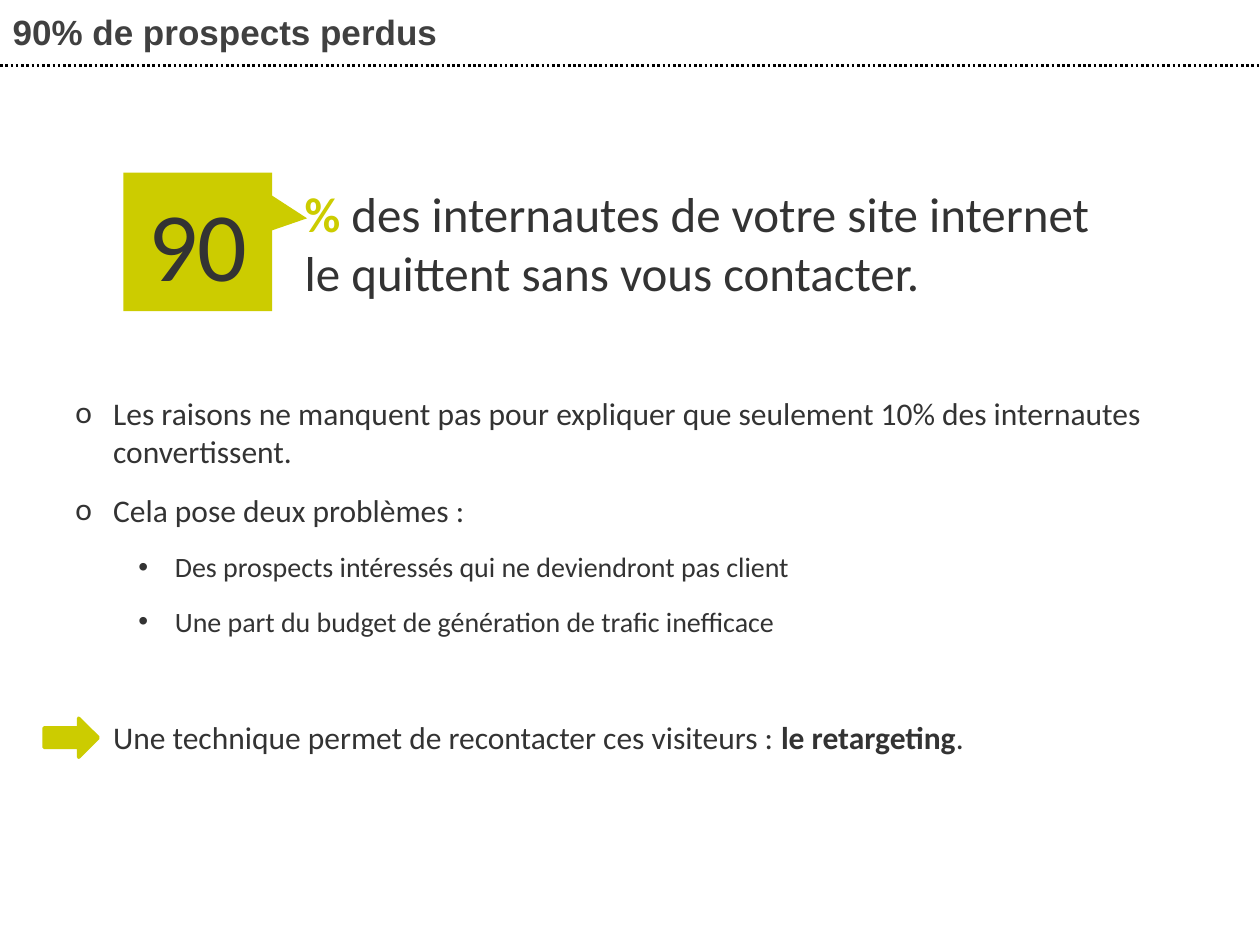
import pptx
import pptx.dml.color
import pptx.enum.dml
import pptx.enum.shapes
import pptx.enum.text
import pptx.oxml.ns
import pptx.util
import lxml.etree

Inches = pptx.util.Inches
Pt = pptx.util.Pt
RGBColor = pptx.dml.color.RGBColor
ANCHOR = pptx.enum.text.MSO_ANCHOR
ALIGN = pptx.enum.text.PP_ALIGN
SHAPE = pptx.enum.shapes.MSO_SHAPE
qn = pptx.oxml.ns.qn

LIME = RGBColor(0xCC, 0xCC, 0x00)
DARK = RGBColor(0x33, 0x33, 0x33)
TITLE_GREY = RGBColor(0x40, 0x40, 0x40)
BLACK = RGBColor(0, 0, 0)


def add_span(para, text, size, color=DARK, bold=False, font="Calibri"):
    span = para.add_run()
    span.text = text
    span.font.name = font
    span.font.size = Pt(size)
    span.font.bold = bold
    span.font.color.rgb = color


def set_margins(frame, left, top, right, bottom):
    frame.margin_left, frame.margin_top = Inches(left), Inches(top)
    frame.margin_right, frame.margin_bottom = Inches(right), Inches(bottom)


def set_indent(para, left, hanging, bullet=None, font="Calibri"):
    properties = para._p.get_or_add_pPr()
    properties.set("marL", str(Inches(left)))
    properties.set("indent", str(-Inches(hanging)))
    if bullet:
        lxml.etree.SubElement(properties, qn("a:buFont")).set("typeface", font)
        lxml.etree.SubElement(properties, qn("a:buChar")).set("char", bullet)


def add_text_box(page, left, top, width, height):
    box = page.shapes.add_textbox(Inches(left), Inches(top), Inches(width), Inches(height))
    box.text_frame.word_wrap = True
    return box.text_frame


def add_lime_shape(page, kind, left, top, width, height):
    shape = page.shapes.add_shape(kind, Inches(left), Inches(top), Inches(width), Inches(height))
    shape.shadow.inherit = False
    shape.fill.solid()
    shape.fill.fore_color.rgb = LIME
    return shape


def add_header(page, left, top, width, height):
    title = page.shapes.title
    title.left, title.top = Inches(left), Inches(top)
    title.width, title.height = Inches(width), Inches(height)
    frame = title.text_frame
    frame.auto_size = pptx.enum.text.MSO_AUTO_SIZE.NONE
    frame.vertical_anchor = ANCHOR.MIDDLE
    set_margins(frame, 0.1, 0.05, 0.2, 0.05)
    para = frame.paragraphs[0]
    para.alignment = ALIGN.LEFT
    add_span(para, "90% de prospects perdus", 20, TITLE_GREY, True, "Arial")

    rule_y = Inches(top + height + 0.02)
    rule = page.shapes.add_connector(
        pptx.enum.shapes.MSO_CONNECTOR.STRAIGHT,
        Inches(left), rule_y, Inches(left + width), rule_y)
    rule.line.color.rgb = BLACK
    rule.line.width = Pt(1.5)
    rule.line.dash_style = pptx.enum.dml.MSO_LINE.ROUND_DOT
    lxml.etree.SubElement(rule._element.spPr, qn("a:effectLst"))


def add_key_figure(page, left, top, width, height):
    frame = add_text_box(page, left + 1.34, top + 0.04, width - 1.34, height - 0.08)
    para = frame.paragraphs[0]
    add_span(para, "% ", 28, LIME, True)
    add_span(para, "des internautes de votre site internet le quittent sans vous contacter.", 28)

    callout = add_lime_shape(page, SHAPE.RECTANGULAR_CALLOUT, left, top, 1.18, height)
    callout.adjustments[0] = 0.735
    callout.adjustments[1] = -0.17
    callout.line.fill.background()
    frame = callout.text_frame
    frame.vertical_anchor = ANCHOR.MIDDLE
    set_margins(frame, 0.08, 0.04, 0.08, 0.04)
    para = frame.paragraphs[0]
    para.alignment = ALIGN.CENTER
    add_span(para, "90", 56)


def add_reasons(page, left, top, width, height):
    frame = add_text_box(page, left, top, width, height)
    points = [
        (0, "Les raisons ne manquent pas pour expliquer que seulement 10% des internautes convertissent."),
        (0, "Cela pose deux problèmes :"),
        (1, "Des prospects intéressés qui ne deviendront pas client"),
        (1, "Une part du budget de génération de trafic inefficace"),
    ]
    styles = [(0.3, 0.3, "o", "Calibri", 18), (0.79, 0.29, "•", "Arial", 16)]
    for index, (level, text) in enumerate(points):
        para = frame.add_paragraph() if index else frame.paragraphs[0]
        indent, hanging, bullet, font, size = styles[level]
        set_indent(para, indent, hanging, bullet, font)
        para.level = level
        para.space_before = Pt(6 if index else 0)
        para.space_after = Pt(6)
        add_span(para, text, size)

    conclusion = frame.add_paragraph()
    set_indent(conclusion, 0.3, 0)
    conclusion.space_before = Pt(40)
    add_span(conclusion, "Une technique permet de recontacter ces visiteurs : ", 18)
    add_span(conclusion, "le retargeting", 18, bold=True)
    add_span(conclusion, ".", 18)

    arrow = add_lime_shape(page, SHAPE.RIGHT_ARROW, left - 0.15, top + 2.62, 0.43, 0.31)
    arrow.line.color.rgb = LIME
    arrow.line.width = Pt(2)


def main():
    deck = pptx.Presentation()
    deck.slide_width, deck.slide_height = Inches(10), Inches(7.5)
    page = deck.slides.add_slide(deck.slide_layouts[5])
    add_header(page, 0, 0, 10, 0.5)
    add_key_figure(page, 0.98, 1.37, 8.11, 1.1)
    add_reasons(page, 0.5, 3.08, 9, 3.07)
    deck.save("out.pptx")


if __name__ == "__main__":
    main()
